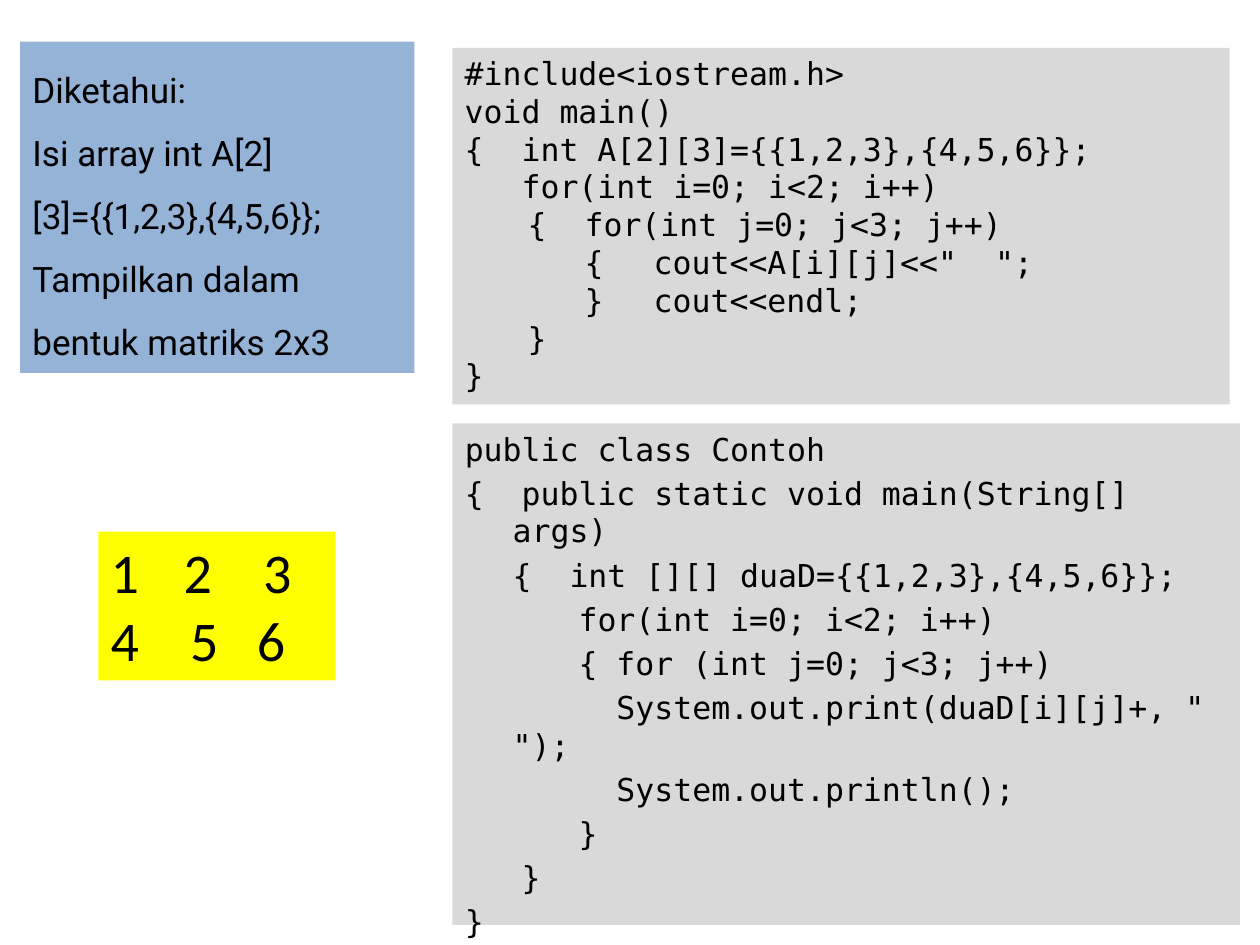
"""Build a slide showing a 2x3 array printed as a matrix in C++ and Java."""
from dataclasses import dataclass

from pptx import Presentation
from pptx.dml.color import RGBColor
from pptx.enum.shapes import MSO_SHAPE
from pptx.enum.text import MSO_ANCHOR, PP_ALIGN
from pptx.oxml.ns import qn
from pptx.slide import Slide
from pptx.util import Inches, Pt
from lxml.etree import SubElement


@dataclass(frozen=True)
class Panel:
    """A filled box of text lines in one font."""
    left: float
    top: float
    width: float
    height: float
    fill: str
    font: str
    size: int
    lines: tuple[str, ...]
    line_spacing: float = 1.0
    space_before: float = 0
    hanging: float = 0
    tabs: tuple[tuple[float, ...], ...] = ()


CODE_FONT, CODE_SIZE, CODE_FILL, CODE_LEFT = "DejaVu Sans Mono", 18, "D9D9D9", 3.59

CPP_LINES = (
    "#include<iostream.h>",
    "void main()",
    "{  int A[2][3]={{1,2,3},{4,5,6}};",
    "   for(int i=0; i<2; i++)",
    "\t{  for(int j=0; j<3; j++)",
    "\t   { \tcout<<A[i][j]<<\"  \";",
    "\t   } \tcout<<endl;",
    "\t}",
    "}",
)
JAVA_LINES = (
    "public class Contoh",
    "{  public static void main(String[] args)",
    "\t{  int [][] duaD={{1,2,3},{4,5,6}};",
    "      for(int i=0; i<2; i++)",
    "      { for (int j=0; j<3; j++)",
    "        System.out.print(duaD[i][j]+, \" \");",
    "        System.out.println();",
    "      }",
    "   }",
    "}",
)
TASK_LINES = (
    "Diketahui:",
    "Isi array int A[2][3]={{1,2,3},{4,5,6}};",
    "Tampilkan dalam bentuk matriks 2x3",
)

PANELS = (
    Panel(CODE_LEFT, 3.36, 6.25, 3.98, CODE_FILL, CODE_FONT, CODE_SIZE, JAVA_LINES,
          space_before=3.6, hanging=0.38),
    Panel(CODE_LEFT, 0.38, 6.17, 2.83, CODE_FILL, CODE_FONT, CODE_SIZE, CPP_LINES),
    Panel(0.16, 0.33, 3.13, 2.63, "95B3D7", "Roboto", 20, TASK_LINES, line_spacing=1.5),
    Panel(0.78, 4.22, 1.88, 1.18, "FFFF00", "Calibri", 32, ("1\t2\t3", "4\t5\t6"),
          tabs=((0.58, 1.21), (0.63, 1.16))),
)


def color(value: str) -> RGBColor:
    """Turn a hex string into a colour."""
    return RGBColor.from_string(value)


def add_panel(slide: Slide, panel: Panel) -> None:
    """Draw one filled box and its lines."""
    s = slide.shapes.add_shape(MSO_SHAPE.RECTANGLE, Inches(panel.left), Inches(panel.top),
                               Inches(panel.width), Inches(panel.height))
    s.shadow.inherit = False
    s.fill.solid()
    s.fill.fore_color.rgb = color(panel.fill)
    s.line.fill.background()
    tf = s.text_frame
    tf.word_wrap = True
    tf.vertical_anchor = MSO_ANCHOR.TOP
    for i, line in enumerate(panel.lines):
        p = tf.paragraphs[0] if i == 0 else tf.add_paragraph()
        p.alignment = PP_ALIGN.LEFT
        p.line_spacing = panel.line_spacing
        p.space_before = Pt(panel.space_before if i else 0)
        pPr = p._p.get_or_add_pPr()
        if panel.hanging:
            pPr.set("marL", str(Inches(panel.hanging)))
            pPr.set("indent", str(-Inches(panel.hanging)))
        if panel.tabs:
            stops = SubElement(pPr, qn("a:tabLst"))
            for pos in panel.tabs[i]:
                SubElement(stops, qn("a:tab"), pos=str(Inches(pos)), algn="l")
        r = p.add_run()
        r.text = line
        r.font.name = panel.font
        r.font.size = Pt(panel.size)
        r.font.color.rgb = color("000000")


def main() -> None:
    """Build and save the slide."""
    prs = Presentation()
    prs.slide_width, prs.slide_height = Inches(10), Inches(7.5)
    slide = prs.slides.add_slide(prs.slide_layouts[6])
    for panel in PANELS:
        add_panel(slide, panel)
    prs.save("out.pptx")


if __name__ == "__main__":
    main()
